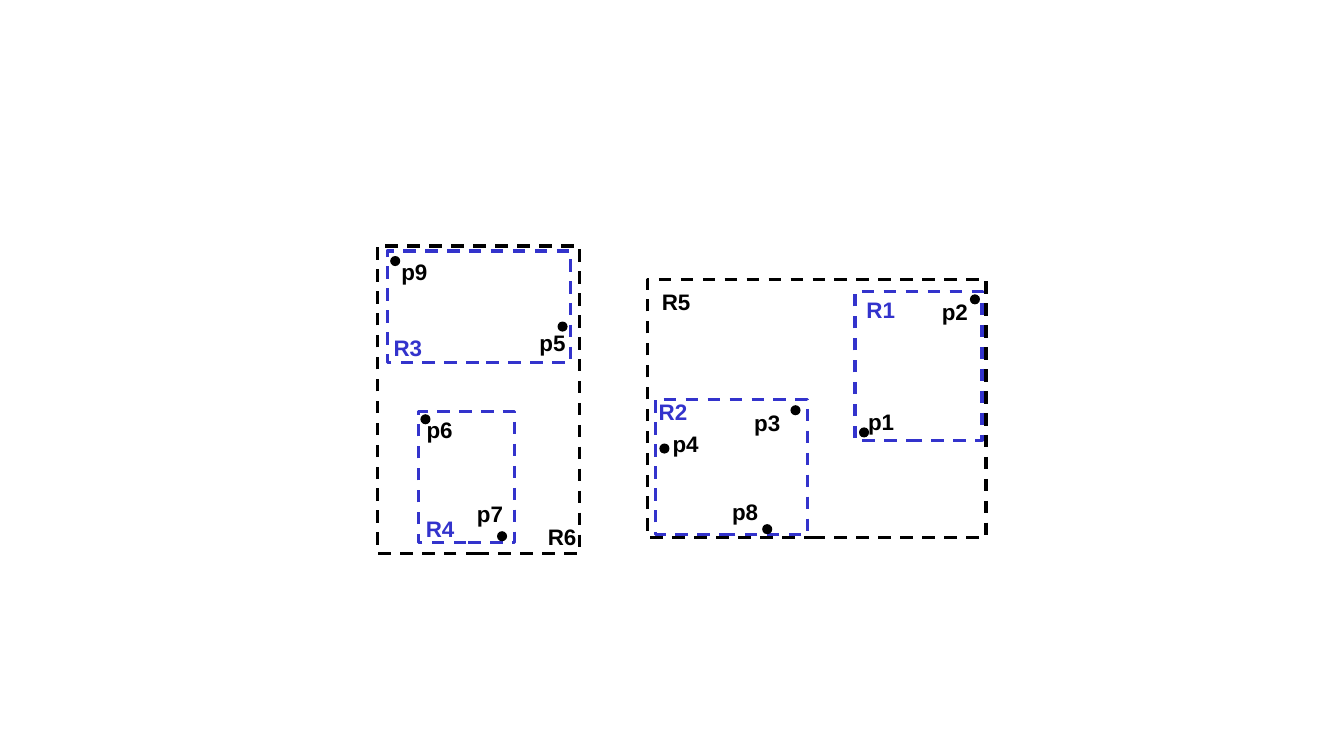
from pptx import Presentation
from pptx import util as u
from pptx.dml.color import RGBColor
from pptx.enum import dml, shapes, text

BLUE, BLACK = "3333CC", "000000"
LABEL_H, DOT = 0.37, 0.1
REGION_LABEL_W, POINT_LABEL_W = 0.49, 0.46

# name, colour, rectangle (left, top, width, height), label (left, top), in inches
REGIONS = [
    ("R3", BLUE, (3.84, 2.49, 1.82, 1.11), (3.8, 3.27)),
    ("R1", BLUE, (8.48, 2.89, 1.26, 1.48), (8.49, 2.89)),
    ("R6", BLACK, (3.74, 2.44, 2.01, 3.05), (5.33, 5.14)),
    ("R4", BLUE, (4.15, 4.08, 0.95, 1.3), (4.12, 5.06)),
    ("R2", BLUE, (6.5, 3.96, 1.51, 1.34), (6.43, 3.9)),
    ("R5", BLACK, (6.42, 2.77, 3.36, 2.56), (6.46, 2.81)),
]
# name, dot (left, top), label (left, top)
POINTS = [
    ("p5", (5.53, 3.19), (5.25, 3.22)),
    ("p9", (3.87, 2.54), (3.88, 2.51)),
    ("p6", (4.17, 4.11), (4.13, 4.08)),
    ("p7", (4.93, 5.27), (4.63, 4.91)),
    ("p3", (7.84, 4.02), (7.38, 4.01)),
    ("p4", (6.54, 4.4), (6.57, 4.22)),
    ("p8", (7.56, 5.2), (7.16, 4.89)),
    ("p1", (8.52, 4.24), (8.51, 4)),
    ("p2", (9.62, 2.92), (9.24, 2.91)),
]


def rgb(value):
    return RGBColor.from_string(value)


def inches(*lengths):
    return [u.Inches(n) for n in lengths]


def add_label(parent, name, at, width, colour):
    tf = parent.add_textbox(*inches(*at, width, LABEL_H)).text_frame
    tf.word_wrap = False
    tf.auto_size = text.MSO_AUTO_SIZE.SHAPE_TO_FIT_TEXT
    p = tf.paragraphs[0]
    p.text = name
    p.alignment = text.PP_ALIGN.CENTER
    font = p.runs[0].font
    font.name, font.size, font.bold = "Arial", u.Pt(16), True
    font.color.rgb = rgb(colour)


def add_region(s, name, colour, box, label_at):
    group = s.shapes.add_group_shape().shapes
    sp = group.add_shape(shapes.MSO_SHAPE.RECTANGLE, *inches(*box))
    sp.shadow.inherit = False
    sp.fill.background()
    sp.line.color.rgb = rgb(colour)
    sp.line.width = u.Pt(2.25)
    sp.line.dash_style = dml.MSO_LINE.DASH
    add_label(group, name, label_at, REGION_LABEL_W, colour)


def add_dot(s, at):
    sp = s.shapes.add_shape(shapes.MSO_SHAPE.OVAL, *inches(*at, DOT, DOT))
    sp.shadow.inherit = False
    sp.fill.solid()
    sp.fill.fore_color.rgb = rgb(BLACK)
    sp.line.fill.background()


def main():
    prs = Presentation()
    prs.slide_width, prs.slide_height = inches(13.33, 7.5)
    s = prs.slides.add_slide(prs.slide_layouts[6])
    for region in REGIONS:
        add_region(s, *region)
    for name, dot_at, label_at in POINTS:
        add_label(s.shapes, name, label_at, POINT_LABEL_W, BLACK)
        add_dot(s, dot_at)
    prs.save("out.pptx")


if __name__ == "__main__":
    main()
